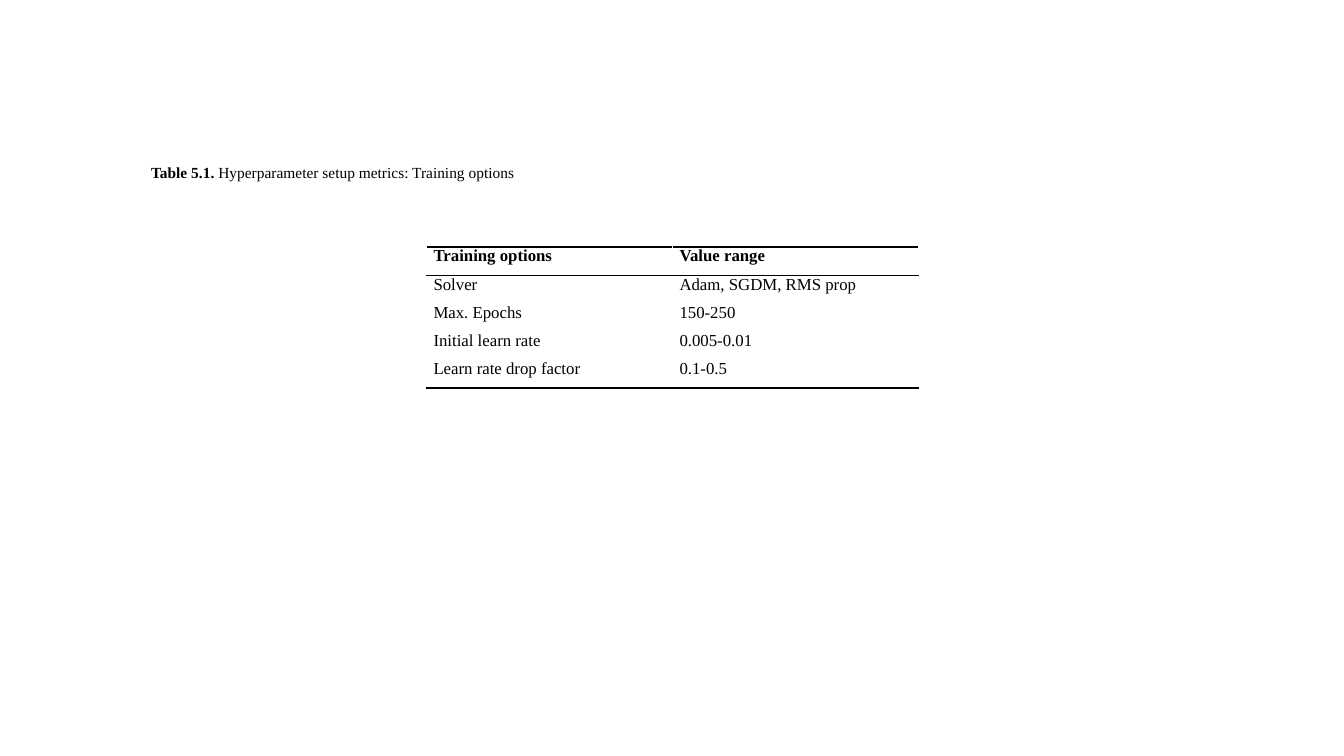
from dataclasses import dataclass

from lxml.etree import SubElement
from pptx import Presentation
from pptx.dml.color import RGBColor
from pptx.enum.text import MSO_ANCHOR, MSO_AUTO_SIZE
from pptx.oxml.ns import qn
from pptx.util import Inches, Pt

CAPTION = [("Table 5.1. ", True), ("Hyperparameter setup metrics: Training options", False)]
OPTIONS = [
    ("Training options", "Value range"),
    ("Solver", "Adam, SGDM, RMS prop"),
    ("Max. Epochs", "150-250"),
    ("Initial learn rate", "0.005-0.01"),
    ("Learn rate drop factor", "0.1-0.5"),
]


@dataclass(frozen=True)
class Theme:
    font: str = "Times New Roman"
    ink: str = "000000"
    paper: str = "FFFFFF"
    caption_size: int = 11
    table_size: int = 12
    rule_width: int = 1


THEME = Theme()
SLIDE_WIDTH, SLIDE_HEIGHT = 13.33, 7.5
CAPTION_BOX = (1.4, 1.56, 4.24, 0.29)
TABLE_LEFT, TABLE_TOP = 4.23, 2.45
COLUMN_WIDTH, ROW_HEIGHT = 2.44, 0.28
CELL_FORMAT = {
    "margin_left": Inches(0.07),
    "margin_right": Inches(0.07),
    "margin_top": 0,
    "margin_bottom": 0,
}
PARAGRAPH_FORMAT = {"space_before": Pt(3), "space_after": Pt(3)}
CAPTION_FORMAT = {
    "word_wrap": True,
    "vertical_anchor": MSO_ANCHOR.MIDDLE,
    "auto_size": MSO_AUTO_SIZE.SHAPE_TO_FIT_TEXT,
}


def apply_format(target, values):
    for name, value in values.items():
        setattr(target, name, value)


def add_run(paragraph, text, size, bold):
    run = paragraph.add_run()
    run.text = text
    apply_format(run.font, {"name": THEME.font, "size": Pt(size), "bold": bold})
    run.font.color.rgb = RGBColor.from_string(THEME.ink)


def add_border(cell, side, color):
    properties = cell._tc.get_or_add_tcPr()
    line = SubElement(properties, qn(f"a:ln{side}"), w=str(Pt(THEME.rule_width)))
    fill = SubElement(line, qn("a:solidFill"))
    SubElement(fill, qn("a:srgbClr"), val=color)


def add_caption(slide):
    box = slide.shapes.add_textbox(*map(Inches, CAPTION_BOX))
    apply_format(box.text_frame, CAPTION_FORMAT)
    for text, bold in CAPTION:
        add_run(box.text_frame.paragraphs[0], text, THEME.caption_size, bold)


def fill_cell(cell, text, row):
    apply_format(cell, CELL_FORMAT)
    ruled_edges = {0, 1, len(OPTIONS)}
    edges = {"L": None, "R": None, "T": row, "B": row + 1}
    for side, edge in edges.items():
        add_border(cell, side, THEME.ink if edge in ruled_edges else THEME.paper)
    cell.fill.solid()
    cell.fill.fore_color.rgb = RGBColor.from_string(THEME.paper)
    paragraph = cell.text_frame.paragraphs[0]
    apply_format(paragraph, PARAGRAPH_FORMAT)
    add_run(paragraph, text, THEME.table_size, row == 0)


def add_options_table(slide):
    rows, columns = len(OPTIONS), len(OPTIONS[0])
    bounds = (TABLE_LEFT, TABLE_TOP, columns * COLUMN_WIDTH, rows * ROW_HEIGHT)
    table = slide.shapes.add_table(rows, columns, *map(Inches, bounds)).table
    apply_format(table, {"first_row": False, "horz_banding": False})
    for row, values in enumerate(OPTIONS):
        for column, text in enumerate(values):
            fill_cell(table.cell(row, column), text, row)


def main():
    presentation = Presentation()
    size = {"slide_width": Inches(SLIDE_WIDTH), "slide_height": Inches(SLIDE_HEIGHT)}
    apply_format(presentation, size)
    slide = presentation.slides.add_slide(presentation.slide_layouts.get_by_name("Blank"))
    add_options_table(slide)
    add_caption(slide)
    presentation.save("out.pptx")


if __name__ == "__main__":
    main()
